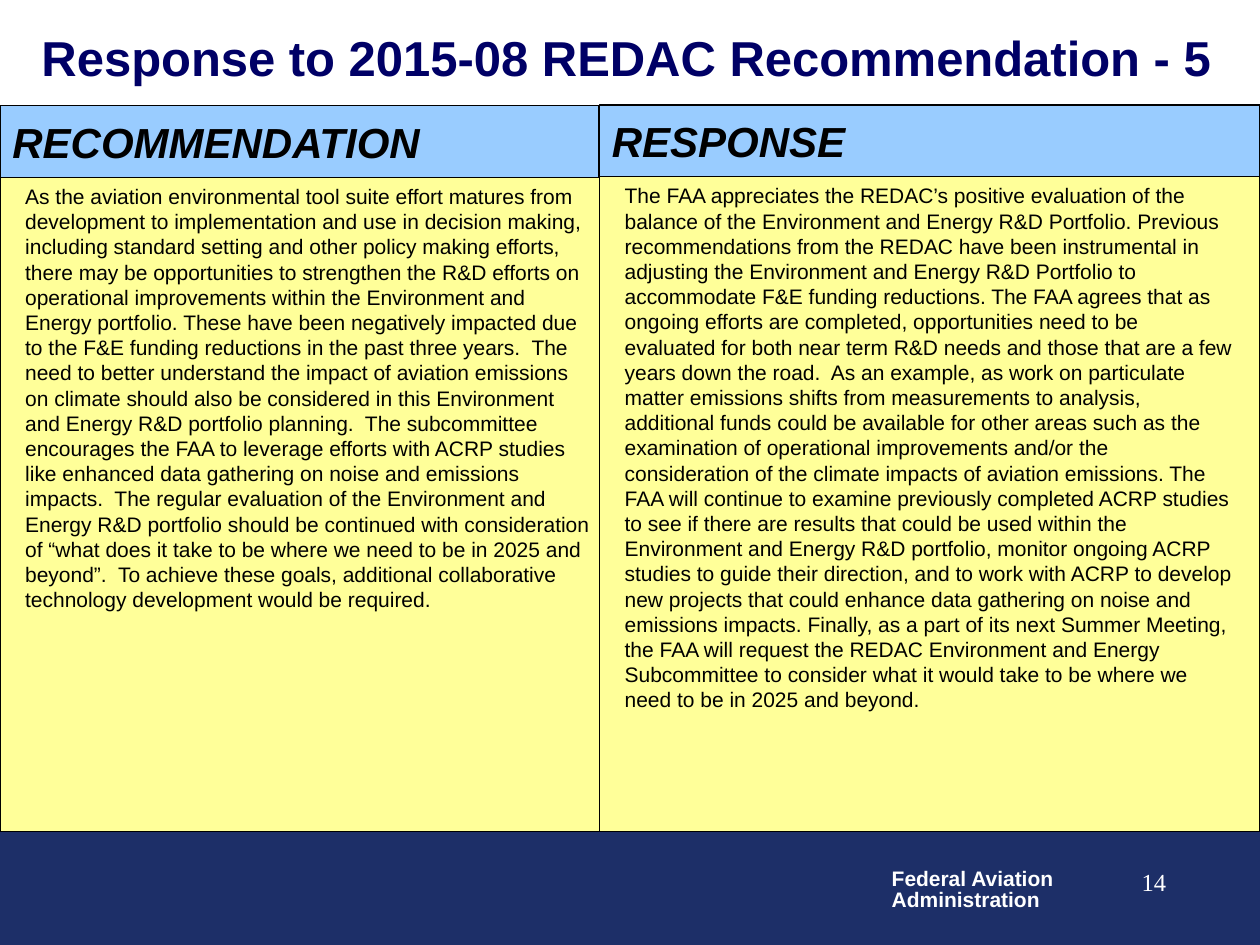
from pptx import Presentation
from pptx.dml.color import RGBColor
from pptx.enum.shapes import MSO_SHAPE
from pptx.enum.text import MSO_ANCHOR, PP_ALIGN
from pptx.util import Pt

RECT = MSO_SHAPE.RECTANGLE
TOP, MIDDLE = MSO_ANCHOR.TOP, MSO_ANCHOR.MIDDLE
LEFT, RIGHT = PP_ALIGN.LEFT, PP_ALIGN.RIGHT

COLORS = {
    "navy": "1D2F68",
    "title": "000066",
    "header": "99CCFF",
    "body": "FFFF99",
    "black": "000000",
    "white": "FFFFFF",
}

TITLE = "Response to 2015-08 REDAC Recommendation - 5"

# Sentences of each column
RECOMMENDATION = [
    "As the aviation environmental tool suite effort matures from development to "
    "implementation and use in decision making, including standard setting and other "
    "policy making efforts, there may be opportunities to strengthen the R&D efforts on "
    "operational improvements within the Environment and Energy portfolio. ",
    "These have been negatively impacted due to the F&E funding reductions in the past "
    "three years.  ",
    "The need to better understand the impact of aviation emissions on climate should "
    "also be considered in this Environment and Energy R&D portfolio planning.  ",
    "The subcommittee encourages the FAA to leverage efforts with ACRP studies like "
    "enhanced data gathering on noise and emissions impacts.  ",
    "The regular evaluation of the Environment and Energy R&D portfolio should be "
    "continued with consideration of “what does it take to be where we need to be in "
    "2025 and beyond”.  ",
    "To achieve these goals, additional collaborative technology development would be "
    "required.",
]
RESPONSE = [
    "The FAA appreciates the REDAC’s positive evaluation of the balance of the "
    "Environment and Energy R&D Portfolio. ",
    "Previous recommendations from the REDAC have been instrumental in adjusting the "
    "Environment and Energy R&D Portfolio to accommodate F&E funding reductions. ",
    "The FAA agrees that as ongoing efforts are completed, opportunities need to be "
    "evaluated for both near term R&D needs and those that are a few years down the "
    "road.  ",
    "As an example, as work on particulate matter emissions shifts from measurements to "
    "analysis, additional funds could be available for other areas such as the "
    "examination of operational improvements and/or the consideration of the climate "
    "impacts of aviation emissions. ",
    "The FAA will continue to examine previously completed ACRP studies to see if there "
    "are results that could be used within the Environment and Energy R&D portfolio, "
    "monitor ongoing ACRP studies to guide their direction, and to work with ACRP to "
    "develop new projects that could enhance data gathering on noise and emissions "
    "impacts. ",
    "Finally, as a part of its next Summer Meeting, the FAA will request the REDAC "
    "Environment and Energy Subcommittee to consider what it would take to be where we "
    "need to be in 2025 and beyond.",
]


def rgb(name):
    return RGBColor.from_string(COLORS[name])


def points(box):
    return [Pt(value) for value in box]


def write(shape, text, size, color, font="Arial", bold=False, italic=False,
          align=LEFT, anchor=TOP, inset=7.2, spacing=None):
    frame = shape.text_frame
    frame.text = text
    frame.word_wrap = True
    frame.vertical_anchor = anchor
    frame.margin_left = frame.margin_right = Pt(inset)
    frame.margin_top = frame.margin_bottom = Pt(3.6)
    for paragraph in frame.paragraphs:
        paragraph.alignment = align
        paragraph.line_spacing = spacing
        for run in paragraph.runs:
            run.font.name = font
            run.font.size = Pt(size)
            run.font.bold = bold
            run.font.italic = italic
            run.font.color.rgb = rgb(color)


def add_panel(slide, box, fill, line="black"):
    panel = slide.shapes.add_shape(RECT, *points(box))
    panel.shadow.inherit = False
    panel.fill.solid()
    panel.fill.fore_color.rgb = rgb(fill)
    panel.line.color.rgb = rgb(line)
    panel.line.width = Pt(0.75)
    return panel


def add_footer(slide, box):
    left, top, width, height = box
    add_panel(slide, box, "navy", line="navy")
    agency = slide.shapes.add_textbox(*points((left + 502.5, top + 18, 108, 32)))
    write(agency, "Federal Aviation\nAdministration", 12, "white", bold=True, spacing=0.85)
    number = slide.shapes.add_textbox(*points((left + 523.5, top + 16.5, 150, 36)))
    write(number, "14", 14, "white", font="Times New Roman", align=RIGHT)


def place_title(slide, box):
    title = slide.shapes.title
    title.left, title.top, title.width, title.height = points(box)
    write(title, TITLE, 28, "title", bold=True, anchor=MIDDLE)


def add_column(slide, box, heading, sentences, header_width):
    left, top, width, height = box
    header_height = 41
    body = add_panel(slide, (left, top + header_height, width, height - header_height), "body")
    write(body, "".join(sentences), 12, "black", inset=14.4)
    header = add_panel(slide, (left, top, header_width, header_height), "header")
    write(header, heading, 24, "black", bold=True, italic=True, anchor=MIDDLE)


def main():
    deck = Presentation()
    deck.slide_width, deck.slide_height = Pt(720), Pt(540)
    slide = deck.slides.add_slide(deck.slide_layouts[5])

    # Footer band
    add_footer(slide, (0, 475.2, 720, 64.2))
    # Title
    place_title(slide, (16.5, 8.6, 694, 48.2))
    # Columns: the response overlaps the wider recommendation body
    add_column(slide, (0, 60.4, 354.2, 415), "RECOMMENDATION", RECOMMENDATION, 342.3)
    add_column(slide, (342.6, 60, 377.4, 415), "RESPONSE", RESPONSE, 377.4)

    deck.save("out.pptx")


if __name__ == "__main__":
    main()
